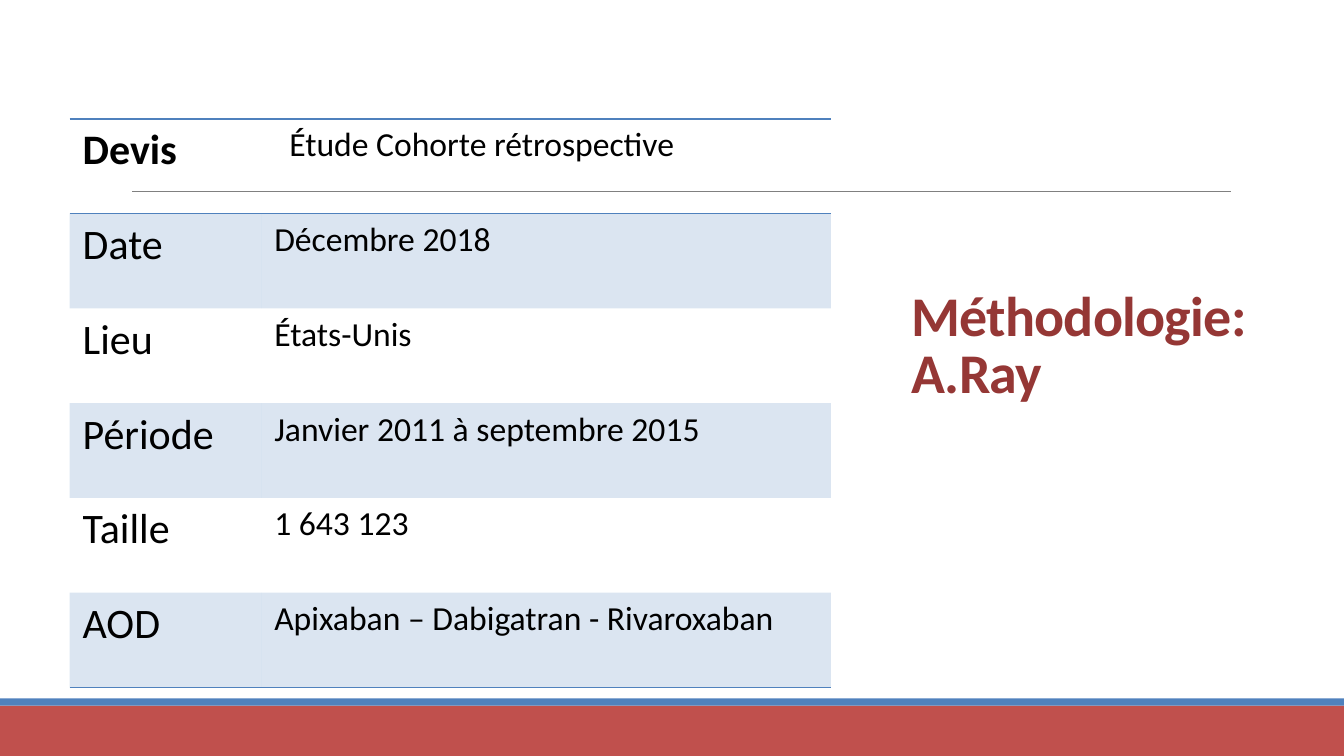
import pptx
import pptx.util
import pptx.dml.color
import pptx.enum.shapes
import pptx.enum.text
import pptx.oxml.ns
from lxml import etree
from dataclasses import dataclass

Inches = pptx.util.Inches
Pt = pptx.util.Pt
qn = pptx.oxml.ns.qn


@dataclass
class Theme:
    font: str = "Calibri"
    blue: str = "4F81BD"
    red: str = "C0504D"
    dark_red: str = "953735"
    grey: str = "808080"
    black: str = "000000"
    band_opacity: int = 20
    title_size: int = 40
    label_size: int = 30
    detail_size: int = 24


theme = Theme()


def style_run(run, size, color, bold=False):
    run.font.name = theme.font
    run.font.size = Pt(size)
    run.font.bold = bold
    run.font.color.rgb = pptx.dml.color.RGBColor.from_string(color)


def add_border(cell, side):
    border = etree.SubElement(cell._tc.get_or_add_tcPr(), qn(side), w=str(Pt(1)))
    paint = etree.SubElement(border, qn("a:solidFill"))
    etree.SubElement(paint, qn("a:srgbClr"), val=theme.blue)


presentation = pptx.Presentation()
presentation.slide_width = Inches(13.33)
presentation.slide_height = Inches(7.5)
slide = presentation.slides.add_slide(presentation.slide_layouts[6])

for top, height, color in [(7, 0.5, theme.red), (6.93, 0.07, theme.blue)]:
    footer_band = slide.shapes.add_shape(
        pptx.enum.shapes.MSO_SHAPE.RECTANGLE,
        0, Inches(top), presentation.slide_width, Inches(height))
    footer_band.shadow.inherit = False
    footer_band.fill.solid()
    footer_band.fill.fore_color.rgb = pptx.dml.color.RGBColor.from_string(color)
    footer_band.line.fill.background()

divider = slide.shapes.add_connector(
    pptx.enum.shapes.MSO_CONNECTOR.STRAIGHT,
    Inches(1.31), Inches(1.9), Inches(12.21), Inches(1.9))
divider.line.color.rgb = pptx.dml.color.RGBColor.from_string(theme.grey)
divider.line.width = Pt(0.5)
etree.SubElement(divider._element.spPr, qn("a:effectLst"))

heading = slide.shapes.add_textbox(
    Inches(8.94), Inches(0.69), Inches(3.69), Inches(5.53)).text_frame
heading.word_wrap = True
heading.vertical_anchor = pptx.enum.text.MSO_ANCHOR.MIDDLE
heading.text = "Méthodologie:\vA.Ray"
heading.paragraphs[0].line_spacing = 0.85
for run in heading.paragraphs[0].runs:
    style_run(run, theme.title_size, theme.dark_red, bold=True)
    run.font._element.set("spc", "-50")

study = [
    ("Devis", "Étude Cohorte rétrospective"),
    ("Date", "Décembre 2018"),
    ("Lieu", "États-Unis"),
    ("Période", "Janvier 2011 à septembre 2015"),
    ("Taille", "1 643 123"),
    ("AOD", "Apixaban – Dabigatran - Rivaroxaban"),
]
row_height = 0.94
methodology = slide.shapes.add_table(
    len(study), 2, Inches(0.69), Inches(1.18),
    Inches(7.55), Inches(row_height * len(study))).table
methodology.first_row = False
methodology.horz_banding = False
no_style = "{2D5ABB26-0587-4C30-8999-92F81FD0307C}"
methodology._tbl.tblPr.find(qn("a:tableStyleId")).text = no_style
methodology.columns[0].width = Inches(1.9)
methodology.columns[1].width = Inches(5.65)

for row, entry in enumerate(study):
    methodology.rows[row].height = Inches(row_height)
    for column, wording in enumerate(entry):
        cell = methodology.cell(row, column)
        cell.margin_left = cell.margin_right = Inches(0.13)
        cell.margin_top = cell.margin_bottom = Inches(0.06)
        cell.text = wording
        size = theme.detail_size if column else theme.label_size
        style_run(cell.text_frame.paragraphs[0].runs[0], size, theme.black,
                  bold=row == 0 and column == 0)
        if row == 0:
            add_border(cell, "a:lnT")
        if row in (0, len(study) - 1):
            add_border(cell, "a:lnB")
        if row % 2:
            cell.fill.solid()
            cell.fill.fore_color.rgb = pptx.dml.color.RGBColor.from_string(theme.blue)
            tint = cell._tc.tcPr.find(qn("a:solidFill")).find(qn("a:srgbClr"))
            etree.SubElement(tint, qn("a:alpha"), val=str(theme.band_opacity * 1000))
        else:
            cell.fill.background()

methodology.cell(0, 1).margin_left = Inches(0.28)

presentation.save("out.pptx")
